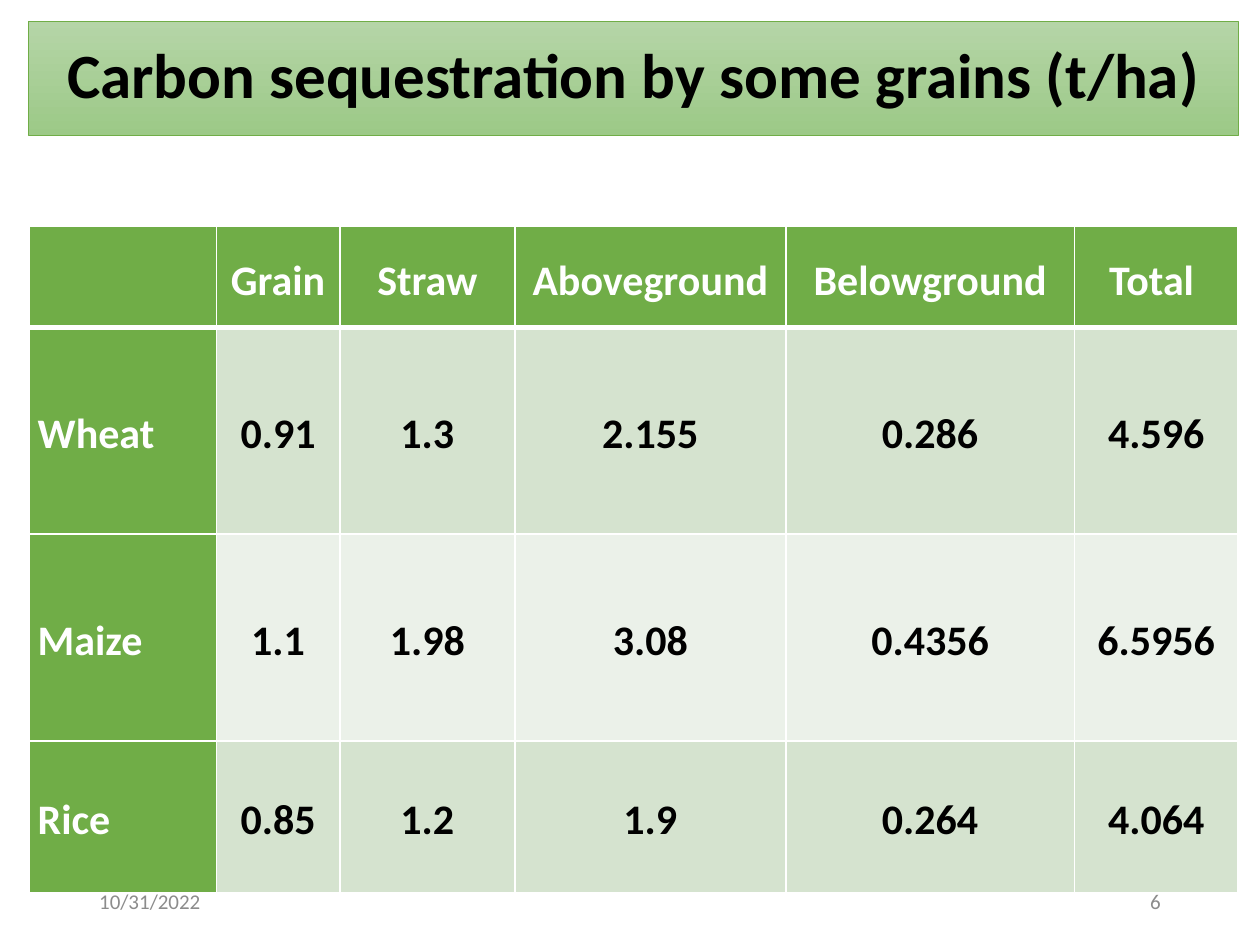
from lxml import etree
from pptx import Presentation
from pptx import util as u
from pptx.dml import color
from pptx.enum import shapes, text
from pptx.oxml import ns

GREEN, WHITE, BLACK, GREY = "70AD47", "FFFFFF", "000000", "8C8C8C"
BANDS = ("D5E3CF", "EBF1E9")
LEFT, WIDTH = 0.58, 24.38
COLUMNS = (3.78, 2.49, 3.53, 5.46, 5.82, 3.3)
HEIGHTS = (2.03, 4.17, 4.17, 3.05)
ROWS = (
    ("", "Grain", "Straw", "Aboveground", "Belowground", "Total "),
    ("Wheat", "0.91", "1.3", "2.155", "0.286", "4.596"),
    ("Maize", "1.1", "1.98", "3.08", "0.4356", "6.5956"),
    ("Rice", "0.85", "1.2", "1.9", "0.264", "4.064"),
)
ALIGN = text.PP_ALIGN
MIDDLE = text.MSO_ANCHOR.MIDDLE


def rgb(value):
    """Turn a hex string into a colour."""
    return color.RGBColor.from_string(value)


def apply(target, values):
    """Set each named attribute on the target."""
    for name, value in values.items():
        setattr(target, name, value)


def write(frame, words, size, tint, bold=False, align=ALIGN.LEFT, spacing=1.0):
    """Write one formatted paragraph into a text frame."""
    para = frame.paragraphs[0]
    apply(para, {"alignment": align, "line_spacing": spacing})
    span = para.add_run()
    span.text = words
    apply(span.font, {"name": "Calibri", "size": u.Pt(size), "bold": bold})
    span.font.color.rgb = rgb(tint)


def add_title(page, words):
    """Add the gradient title bar."""
    box = page.shapes.add_shape(
        shapes.MSO_SHAPE.RECTANGLE, u.Cm(LEFT), u.Cm(0.43), u.Cm(WIDTH), u.Cm(2.31))
    box.shadow.inherit = False
    box.fill.gradient()
    box.fill.gradient_angle = 270
    for stop, tint in zip(box.fill.gradient_stops, ("B5D5A7", "9CC987")):
        stop.color.rgb = rgb(tint)
    box.line.color.rgb = rgb(GREEN)
    box.line.width = u.Pt(0.5)
    apply(box.text_frame, {"word_wrap": True, "vertical_anchor": MIDDLE})
    write(box.text_frame, words, 36, BLACK, True, ALIGN.CENTER, 0.9)


def add_borders(cell, widths):
    """Draw white borders on the four sides of a cell."""
    properties = cell._tc.get_or_add_tcPr()
    for side, width in widths.items():
        line = etree.SubElement(properties, ns.qn(f"a:ln{side}"), w=str(u.Pt(width)))
        fill = etree.SubElement(line, ns.qn("a:solidFill"))
        etree.SubElement(fill, ns.qn("a:srgbClr"), val=WHITE)


def fill_cell(cell, words, row, column):
    """Format one cell by its place in the table."""
    heading = row == 0 or column == 0
    add_borders(cell, {"L": 1, "R": 1, "T": 3 if row == 1 else 1, "B": 3 if row == 0 else 1})
    cell.fill.solid()
    cell.fill.fore_color.rgb = rgb(GREEN if heading else BANDS[(row - 1) % 2])
    apply(cell, {"vertical_anchor": MIDDLE, "margin_left": u.Cm(0.18),
                 "margin_right": u.Cm(0.18), "margin_top": 0, "margin_bottom": 0})
    if words:
        write(cell.text_frame, words, 24, WHITE if heading else BLACK, True,
              ALIGN.CENTER if column else ALIGN.LEFT, 1.15)


def add_grain_table(page):
    """Add the table of carbon values."""
    table = page.shapes.add_table(
        len(ROWS), len(COLUMNS), u.Cm(LEFT), u.Cm(4.57),
        u.Cm(WIDTH), u.Cm(sum(HEIGHTS))).table
    for column, width in zip(table.columns, COLUMNS):
        column.width = u.Cm(width)
    for row, height in zip(table.rows, HEIGHTS):
        row.height = u.Cm(height)
    for row, values in enumerate(ROWS):
        for column, words in enumerate(values):
            fill_cell(table.cell(row, column), words, row, column)


def add_footer(page, words, left, align):
    """Add a small grey footer text."""
    box = page.shapes.add_textbox(u.Cm(left), u.Cm(17.65), u.Cm(5.72), u.Cm(1.02))
    apply(box.text_frame, {"word_wrap": True, "vertical_anchor": MIDDLE})
    write(box.text_frame, words, 12, GREY, align=align)


def main():
    """Build and save the slide."""
    deck = Presentation()
    apply(deck, {"slide_width": u.Cm(25.4), "slide_height": u.Cm(19.05)})
    page = deck.slides.add_slide(deck.slide_layouts[6])
    add_title(page, "Carbon sequestration by some grains (t/ha)")
    add_grain_table(page)
    add_footer(page, "10/31/2022", 1.75, ALIGN.LEFT)
    add_footer(page, "6", 17.93, ALIGN.RIGHT)
    deck.save("out.pptx")


if __name__ == "__main__":
    main()
